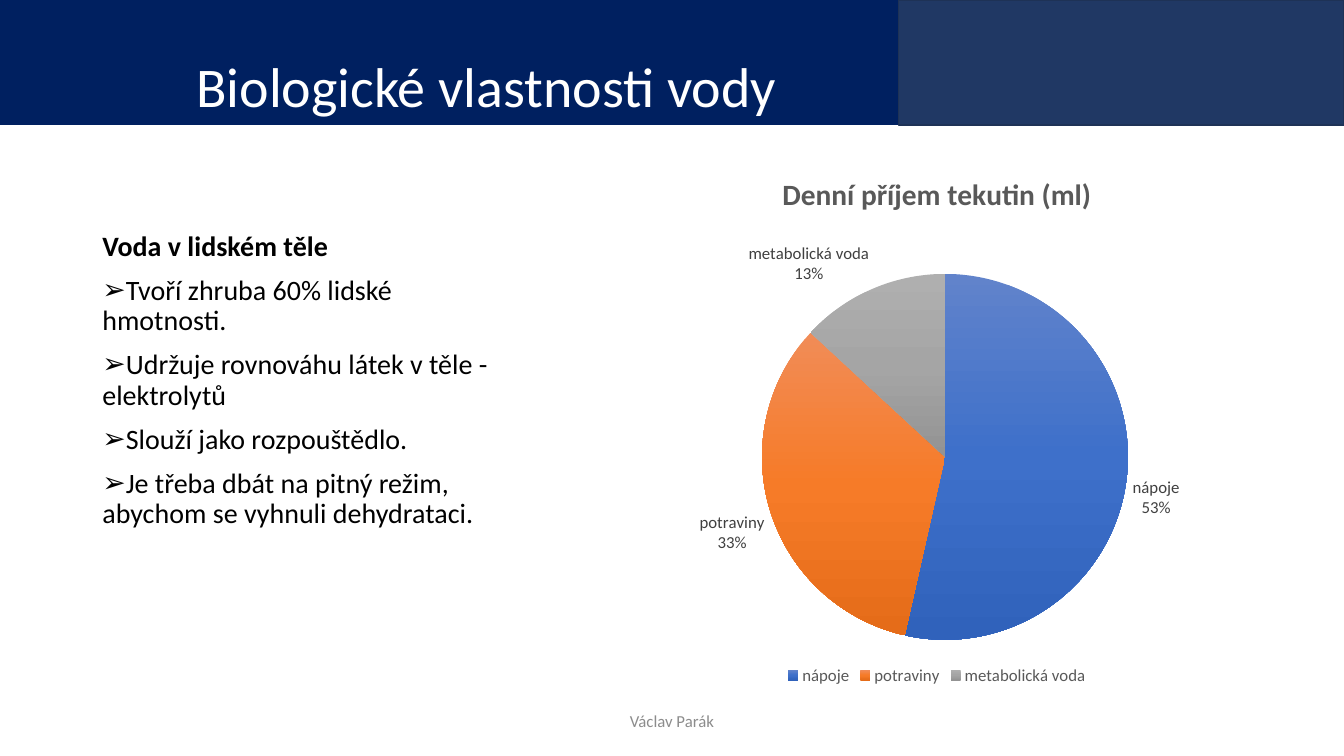
from lxml.etree import SubElement
from pptx import Presentation
from pptx.chart.data import CategoryChartData
from pptx.dml.color import RGBColor
from pptx.enum.chart import XL_CHART_TYPE, XL_LABEL_POSITION, XL_LEGEND_POSITION
from pptx.enum.shapes import MSO_SHAPE
from pptx.enum.text import MSO_ANCHOR, MSO_AUTO_SIZE, PP_ALIGN
from pptx.oxml.ns import qn
from pptx.util import Cm, Pt

HEADING = "Biologické vlastnosti vody"
SUBHEADING = "Voda v lidském těle"
FACTS = [
    "Tvoří zhruba 60% lidské hmotnosti.",
    "Udržuje rovnováhu látek v těle - elektrolytů",
    "Slouží jako rozpouštědlo.",
    "Je třeba dbát na pitný režim, abychom se vyhnuli dehydrataci.",
]
AUTHOR = "Václav Parák"
INTAKE_TITLE = "Denní příjem tekutin (ml)"
INTAKE = [
    ("nápoje", 53, ("6183CB", "3E70CA", "3062BB")),
    ("potraviny", 33, ("F18C57", "F67B28", "E56C19")),
    ("metabolická voda", 13, ("AFAFAF", "A5A5A5", "939393")),
]
PIE_AREA = {"x": 0.243, "y": 0.227, "w": 0.538, "h": 0.681}

SLIDE_WIDTH, SLIDE_HEIGHT = Cm(33.87), Cm(19.05)
BAND_HEIGHT = Cm(3.15)
HEADING_WIDTH = Cm(22.65)


def colour(hex_code):
    return RGBColor.from_string(hex_code)


def apply(target, values):
    for name, value in values.items():
        setattr(target, name, value)


def style_font(font, size, hex_code, bold=False):
    apply(font, {"name": "Calibri", "size": Pt(size), "bold": bold})
    font.color.rgb = colour(hex_code)


def add_bullet(paragraph):
    properties = paragraph._p.get_or_add_pPr()
    apply_indent = {"marL": "0", "indent": "0"}
    for name, value in apply_indent.items():
        properties.set(name, value)
    SubElement(properties, qn("a:buFont")).set("typeface", "Arial")
    SubElement(properties, qn("a:buChar")).set("char", "➢")


def fill_slice(point, shades):
    point.format.fill.gradient()
    point.format.fill.gradient_angle = 270
    stops = next(point._element.iter(qn("a:gsLst"))) if hasattr(point, "_element") else None
    return stops


def shade_slices(series):
    for index in range(len(INTAKE)):
        fill = series.points[index].format.fill
        fill.gradient()
        fill.gradient_angle = 270
    stop_lists = list(series._element.iter(qn("a:gsLst")))
    for stops, (_, _, shades) in zip(stop_lists, INTAKE):
        for stop in list(stops):
            stops.remove(stop)
        for position, shade in zip((0, 50000, 100000), shades):
            stop = SubElement(stops, qn("a:gs"), pos=str(position))
            SubElement(stop, qn("a:srgbClr"), val=shade)


def place_pie(chart):
    plot_area = next(chart._chartSpace.iter(qn("c:plotArea")))
    for layout in plot_area.findall(qn("c:layout")):
        plot_area.remove(layout)
    layout = SubElement(plot_area, qn("c:layout"))
    plot_area.insert(0, layout)
    manual = SubElement(layout, qn("c:manualLayout"))
    settings = {"layoutTarget": "inner", "xMode": "edge", "yMode": "edge", **PIE_AREA}
    for name, value in settings.items():
        SubElement(manual, qn(f"c:{name}")).set("val", str(value))


def add_heading(slide):
    heading = slide.shapes.title
    apply(heading, {"left": 0, "top": 0, "width": HEADING_WIDTH, "height": BAND_HEIGHT})
    heading.fill.solid()
    heading.fill.fore_color.rgb = colour("002060")
    frame = heading.text_frame
    frame.text = HEADING
    apply(frame, {"margin_left": Cm(4.95), "vertical_anchor": MSO_ANCHOR.BOTTOM,
                  "word_wrap": True, "auto_size": MSO_AUTO_SIZE.NONE})
    apply(frame.paragraphs[0], {"alignment": PP_ALIGN.LEFT, "line_spacing": 0.9})
    style_font(frame.paragraphs[0].runs[0].font, 40, "FFFFFF")


def add_facts(slide):
    frame = slide.shapes.add_textbox(Cm(2.33), Cm(5.72), Cm(10.92), Cm(10.6)).text_frame
    frame.word_wrap = True
    for index, line in enumerate([SUBHEADING, *FACTS]):
        paragraph = frame.add_paragraph() if index else frame.paragraphs[0]
        paragraph.text = line
        apply(paragraph, {"line_spacing": 0.9, "space_before": Pt(10)})
        style_font(paragraph.runs[0].font, 20, "000000", bold=index == 0)
        if index:
            add_bullet(paragraph)


def add_author(slide):
    frame = slide.shapes.add_textbox(Cm(11.22), Cm(17.66), Cm(11.43), Cm(1.01)).text_frame
    apply(frame, {"word_wrap": True, "vertical_anchor": MSO_ANCHOR.MIDDLE})
    frame.text = AUTHOR
    frame.paragraphs[0].alignment = PP_ALIGN.CENTER
    style_font(frame.paragraphs[0].runs[0].font, 12, "8C8C8C")


def add_intake(slide):
    intake = CategoryChartData()
    intake.categories = [name for name, _, _ in INTAKE]
    intake.add_series("Series 1", [share for _, share, _ in INTAKE])
    chart = slide.shapes.add_chart(
        XL_CHART_TYPE.PIE, Cm(15.04), Cm(3.83), Cm(17.14), Cm(13.54), intake).chart
    style_font(chart.font, 10, "000000")
    chart.has_title = True
    chart.chart_title.text_frame.text = INTAKE_TITLE
    chart.chart_title.include_in_layout = False
    style_font(chart.chart_title.text_frame.paragraphs[0].runs[0].font, 21, "595959", True)
    chart.has_legend = True
    apply(chart.legend, {"position": XL_LEGEND_POSITION.BOTTOM, "include_in_layout": False})
    style_font(chart.legend.font, 12, "595959")
    pie = chart.plots[0]
    apply(pie, {"vary_by_categories": True, "has_data_labels": True})
    shade_slices(pie.series[0])
    labels = pie.series[0].data_labels
    apply(labels, {"show_category_name": True, "show_value": True,
                   "number_format": '0"%"', "number_format_is_linked": False,
                   "position": XL_LABEL_POSITION.OUTSIDE_END})
    style_font(labels.font, 12, "404040")
    separator = SubElement(labels._element, qn("c:separator"))
    separator.text = "\n"
    labels._element.find(qn("c:showBubbleSize")).addnext(separator)
    place_pie(chart)


def add_corner(slide):
    corner = slide.shapes.add_shape(
        MSO_SHAPE.RECTANGLE, HEADING_WIDTH, 0, SLIDE_WIDTH - HEADING_WIDTH, BAND_HEIGHT)
    corner.shadow.inherit = False
    corner.fill.solid()
    corner.fill.fore_color.rgb = colour("203864")
    corner.line.color.rgb = colour("1E3256")
    corner.line.width = Pt(1)


def main():
    deck = Presentation()
    apply(deck, {"slide_width": SLIDE_WIDTH, "slide_height": SLIDE_HEIGHT})
    slide = deck.slides.add_slide(deck.slide_layouts[5])
    for add_part in (add_heading, add_facts, add_author, add_intake, add_corner):
        add_part(slide)
    deck.save("out.pptx")


if __name__ == "__main__":
    main()
